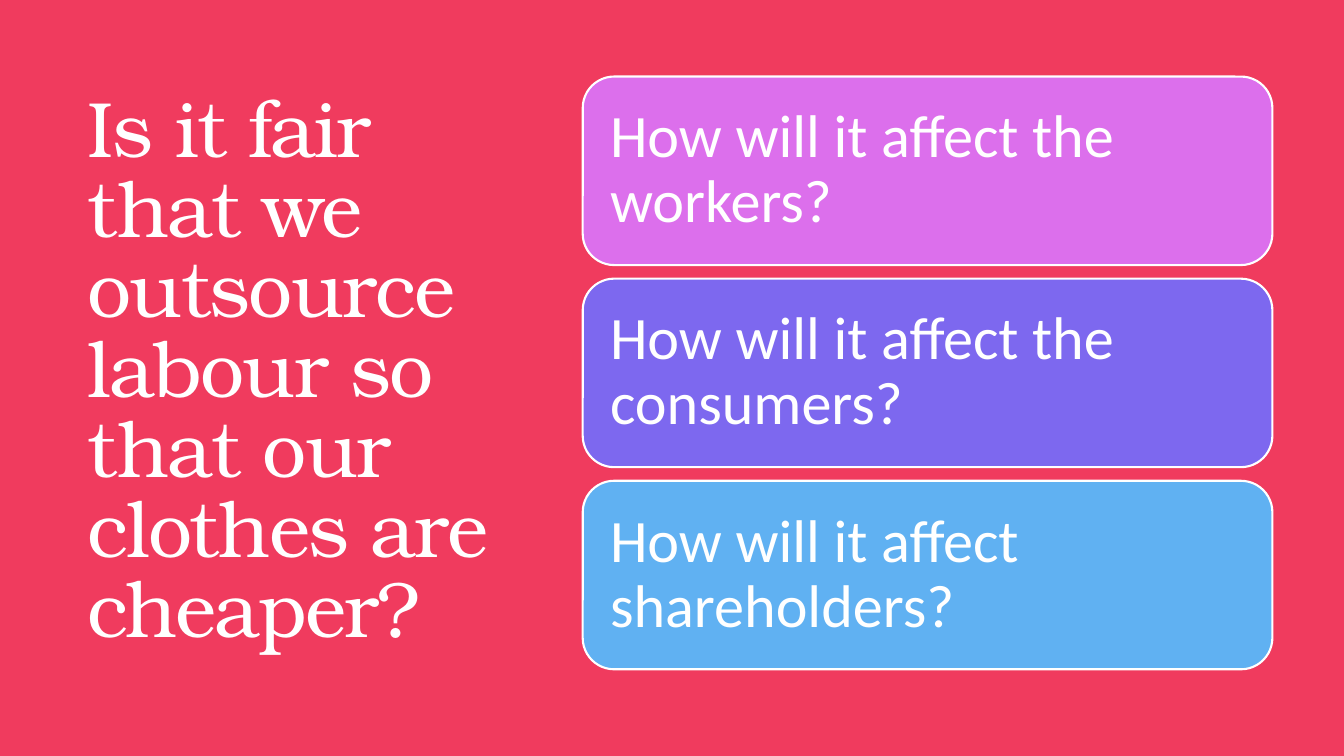
from dataclasses import dataclass

from pptx import Presentation, util as u
from pptx.dml.color import RGBColor
from pptx.enum import shapes, text
from pptx.shapes.autoshape import Shape
from pptx.slide import Slide

WHITE = RGBColor(0xFF, 0xFF, 0xFF)
RED = RGBColor(0xF0, 0x3B, 0x5E)
PINK = RGBColor(0xDC, 0x6F, 0xEC)
VIOLET = RGBColor(0x7D, 0x68, 0xEF)
SKY = RGBColor(0x60, 0xB1, 0xF2)

PAGE_WIDTH, PAGE_HEIGHT = u.Inches(13.33), u.Inches(7.5)

# Card column, in inches: one card per row
CARD_LEFT, CARD_TOP = 5.78, 0.76
CARD_WIDTH, CARD_HEIGHT = 6.84, 1.87
ROW_PITCH = 2.005


@dataclass(frozen=True)
class Card:
    question: str
    colour: RGBColor


CARDS = (
    Card("How will it affect the workers?", PINK),
    Card("How will it affect the consumers?", VIOLET),
    Card("How will it affect shareholders?", SKY),
)


def write(box: Shape, words: str, *, font: str, size: float, line_spacing: float,
          inset: tuple[float, float], tracking: float = 0) -> None:
    """Fill a box with one left-aligned, vertically centred paragraph."""
    frame = box.text_frame
    frame.word_wrap = True
    frame.vertical_anchor = text.MSO_ANCHOR.MIDDLE
    frame.margin_left = frame.margin_right = u.Inches(inset[0])
    frame.margin_top = frame.margin_bottom = u.Inches(inset[1])
    para = frame.paragraphs[0]
    para.alignment = text.PP_ALIGN.LEFT
    para.line_spacing = line_spacing
    span = para.add_run()
    span.text = words
    span.font.name = font
    span.font.size = u.Pt(size)
    span.font.color.rgb = WHITE
    if tracking:
        span.font._element.set("spc", str(round(tracking * 100)))


def add_backdrop(page: Slide) -> None:
    backdrop = page.shapes.add_shape(shapes.MSO_SHAPE.RECTANGLE, 0, 0, PAGE_WIDTH, PAGE_HEIGHT)
    backdrop.shadow.inherit = False
    backdrop.fill.solid()
    backdrop.fill.fore_color.rgb = RED
    backdrop.line.fill.background()


def add_title(page: Slide) -> None:
    box = page.shapes.add_textbox(u.Inches(0.77), u.Inches(0.7), u.Inches(4.37), u.Inches(6.01))
    write(box, "Is it fair that we outsource labour so that our clothes are cheaper?",
          font="TeX Gyre Bonum", size=56, line_spacing=0.85, inset=(0.1, 0.05), tracking=-1.2)


def add_card(page: Slide, card: Card, row: int) -> None:
    box = page.shapes.add_shape(
        shapes.MSO_SHAPE.ROUNDED_RECTANGLE,
        u.Inches(CARD_LEFT), u.Inches(CARD_TOP + row * ROW_PITCH),
        u.Inches(CARD_WIDTH), u.Inches(CARD_HEIGHT))
    box.shadow.inherit = False
    box.fill.solid()
    box.fill.fore_color.rgb = card.colour
    box.line.color.rgb = WHITE
    box.line.width = u.Pt(1.5)
    write(box, card.question, font="Calibri", size=43, line_spacing=0.9, inset=(0.18, 0.18))


def main() -> None:
    deck = Presentation()
    deck.slide_width, deck.slide_height = PAGE_WIDTH, PAGE_HEIGHT
    page = deck.slides.add_slide(deck.slide_layouts[6])
    add_backdrop(page)
    add_title(page)
    for row, card in enumerate(CARDS):
        add_card(page, card, row)
    deck.save("out.pptx")


if __name__ == "__main__":
    main()
